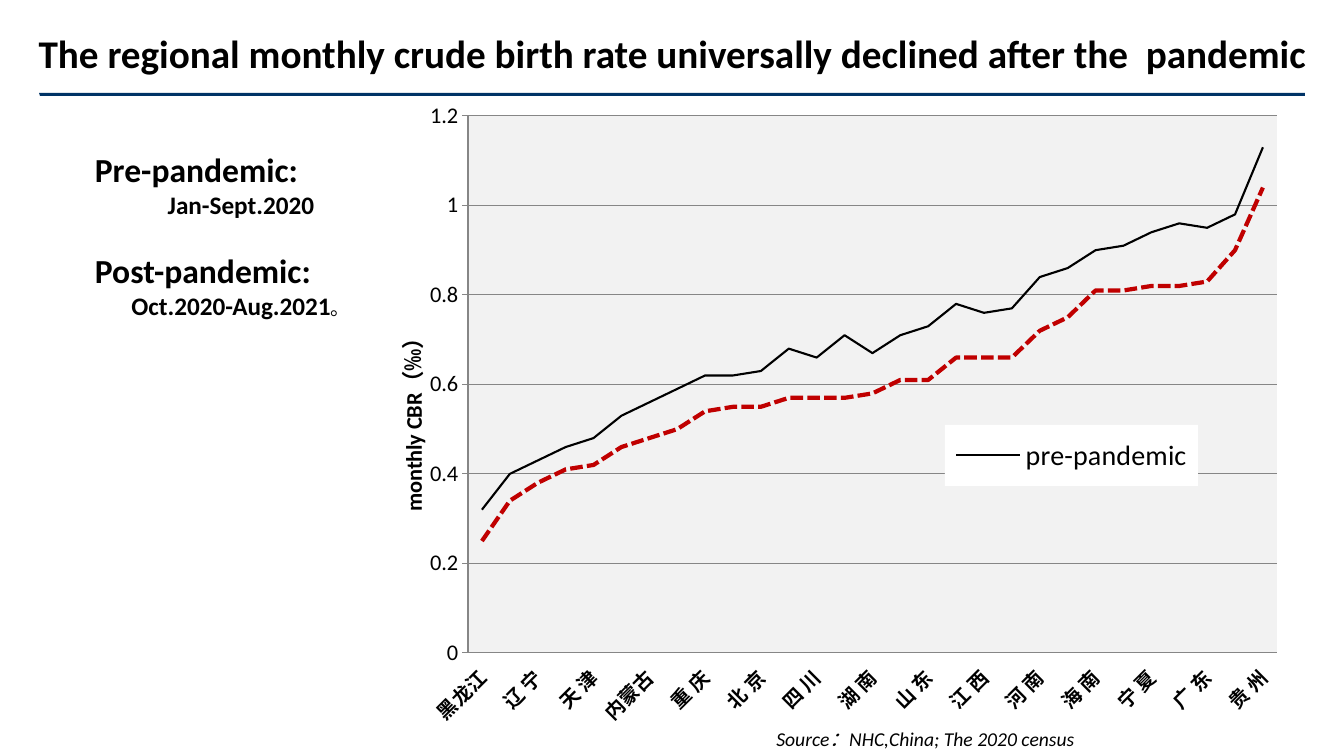
import lxml.etree
import pptx
import pptx.chart.data
import pptx.dml.color
import pptx.enum.chart
import pptx.enum.dml
import pptx.enum.text
import pptx.oxml
import pptx.oxml.ns
import pptx.util

PX = 914400 / 100.8
THEME = {
    "font": "Calibri",
    "text": "000000", "rule": "003366", "post": "C00000",
    "plot": "F2F2F2", "grid": "868686", "legend": "FFFFFF",
    "title": 28, "heading": 24, "period": 18, "note": 14,
    "region": 14, "axis": 16, "key": 20,
}
CENTER = pptx.enum.text.PP_ALIGN.CENTER
LEFT = pptx.enum.text.PP_ALIGN.LEFT
CHART_BOX = (379, 86, 959, 670)


def style(font, size, color="text", bold=False, italic=False):
    font.name = THEME["font"]
    font.size = pptx.util.Pt(THEME[size])
    font.bold = bold
    font.italic = italic
    font.color.rgb = pptx.dml.color.RGBColor.from_string(THEME[color])


def chart_layout(left, top, width=None, height=None, inner=False):
    x, y, w, h = CHART_BOX
    settings = [("layoutTarget", "inner")] if inner else []
    settings += [("xMode", "edge"), ("yMode", "edge"),
                 ("x", (left - x) / w), ("y", (top - y) / h)]
    if width:
        settings += [("w", width / w), ("h", height / h)]
    layout = pptx.oxml.parse_xml(f"<c:layout {pptx.oxml.ns.nsdecls('c')}/>")
    manual = lxml.etree.SubElement(layout, pptx.oxml.ns.qn("c:manualLayout"))
    for tag, val in settings:
        lxml.etree.SubElement(manual, pptx.oxml.ns.qn("c:" + tag)).set("val", str(val))
    return layout


deck = pptx.Presentation()
deck.slide_width = pptx.util.Emu(round(1344 * PX))
deck.slide_height = pptx.util.Emu(round(756 * PX))
slide = deck.slides.add_slide(deck.slide_layouts[5])

headline = slide.shapes.title
headline.left, headline.top, headline.width, headline.height = [
    round(v * PX) for v in (0, 29, 1344, 47)]
headline_frame = headline.text_frame
headline_frame.margin_left = headline_frame.margin_right = 0
headline_frame.margin_top = headline_frame.margin_bottom = 0
headline_frame.auto_size = pptx.enum.text.MSO_AUTO_SIZE.NONE
headline_frame.vertical_anchor = pptx.enum.text.MSO_ANCHOR.TOP
headline_frame.paragraphs[0].alignment = CENTER
headline_run = headline_frame.paragraphs[0].add_run()
headline_run.text = "The regional monthly crude birth rate universally declined after the  pandemic"
style(headline_run.font, "title", bold=True)

outline = slide.shapes.build_freeform(39, 93, scale=PX)
outline.add_line_segments([(1305, 93), (1305, 96), (40, 96)])
rule = outline.convert_to_shape()
rule.shadow.inherit = False
rule.fill.solid()
rule.fill.fore_color.rgb = pptx.dml.color.RGBColor.from_string(THEME["rule"])
rule.line.fill.background()

regions = [
    "黑龙江", "吉 林", "辽 宁", "上 海", "天 津", "江 苏", "内蒙古", "新 疆", "重 庆", "浙 江",
    "北 京", "河 北", "四 川", "山 西", "湖 南", "安 徽", "山 东", "陕 西", "江 西", "福 建",
    "河 南", "甘 肃", "海 南", "云 南", "宁 夏", "广 西", "广 东", "青 海", "贵 州"]
birth_rates = {
    "pre-pandemic": [
        0.32, 0.4, 0.43, 0.46, 0.48, 0.53, 0.56, 0.59, 0.62, 0.62,
        0.63, 0.68, 0.66, 0.71, 0.67, 0.71, 0.73, 0.78, 0.76, 0.77,
        0.84, 0.86, 0.9, 0.91, 0.94, 0.96, 0.95, 0.98, 1.13],
    "post-pandemic": [
        0.25, 0.34, 0.38, 0.41, 0.42, 0.46, 0.48, 0.5, 0.54, 0.55,
        0.55, 0.57, 0.57, 0.57, 0.58, 0.61, 0.61, 0.66, 0.66, 0.66,
        0.72, 0.75, 0.81, 0.81, 0.82, 0.82, 0.83, 0.9, 1.04],
}
rate_data = pptx.chart.data.CategoryChartData()
rate_data.categories = regions
for period, rates in birth_rates.items():
    rate_data.add_series(period, rates)
chart = slide.shapes.add_chart(
    pptx.enum.chart.XL_CHART_TYPE.LINE,
    *[round(v * PX) for v in CHART_BOX], rate_data).chart
chart.has_title = False
style(chart.font, "axis")
chart.plots[0].vary_by_categories = False

line_styles = [("text", 1.5, None), ("post", 3, pptx.enum.dml.MSO_LINE.SQUARE_DOT)]
for series, (color, weight, dash) in zip(chart.plots[0].series, line_styles):
    series.smooth = False
    series.marker.style = pptx.enum.chart.XL_MARKER_STYLE.NONE
    series.format.line.color.rgb = pptx.dml.color.RGBColor.from_string(THEME[color])
    series.format.line.width = pptx.util.Pt(weight)
    if dash:
        series.format.line.dash_style = dash

region_axis, rate_axis = chart.category_axis, chart.value_axis
region_axis.major_tick_mark = pptx.enum.chart.XL_TICK_MARK.NONE
region_axis.tick_label_position = pptx.enum.chart.XL_TICK_LABEL_POSITION.LOW
style(region_axis.tick_labels.font, "region", bold=True)
region_axis._element.txPr.find(pptx.oxml.ns.qn("a:bodyPr")).set("rot", "-2700000")
rate_axis.minimum_scale, rate_axis.maximum_scale, rate_axis.major_unit = 0, 1.2, 0.2
rate_axis.major_tick_mark = pptx.enum.chart.XL_TICK_MARK.OUTSIDE
rate_axis.has_major_gridlines = True
rate_axis.tick_labels.number_format = "General"
rate_axis.tick_labels.number_format_is_linked = False
style(rate_axis.tick_labels.font, "axis")
for part in (region_axis, rate_axis, rate_axis.major_gridlines):
    part.format.line.color.rgb = pptx.dml.color.RGBColor.from_string(THEME["grid"])
    part.format.line.width = pptx.util.Pt(0.75)

rate_title = rate_axis.axis_title
unit_run = rate_title.text_frame.paragraphs[0].add_run()
unit_run.text = "monthly CBR（‰）"
style(unit_run.font, "axis", bold=True)
rate_title.text_frame._txBody.bodyPr.set("rot", "-5400000")
for stale in rate_title._element.findall(pptx.oxml.ns.qn("c:layout")):
    rate_title._element.remove(stale)
rate_title._element.find(pptx.oxml.ns.qn("c:tx")).addnext(chart_layout(390, 323))

chart.has_legend = True
legend = chart.legend
legend.position = pptx.enum.chart.XL_LEGEND_POSITION.RIGHT
legend.include_in_layout = False
style(legend.font, "key")
for stale in legend._element.findall(pptx.oxml.ns.qn("c:layout")):
    legend._element.remove(stale)
position = legend._element.find(pptx.oxml.ns.qn("c:legendPos"))
position.addnext(chart_layout(945, 425, 253, 61))
position.addnext(pptx.oxml.parse_xml(
    f"<c:legendEntry {pptx.oxml.ns.nsdecls('c')}>"
    '<c:idx val="1"/><c:delete val="1"/></c:legendEntry>'))

plot_area = chart._chartSpace.chart.plotArea
for stale in plot_area.findall(pptx.oxml.ns.qn("c:layout")):
    plot_area.remove(stale)
plot_area.insert(0, chart_layout(468, 116, 809, 537, inner=True))
fill_xml = (f"<c:spPr {pptx.oxml.ns.nsdecls('c', 'a')}><a:solidFill>"
            '<a:srgbClr val="{}"/></a:solidFill><a:ln><a:noFill/></a:ln></c:spPr>')
plot_area.append(pptx.oxml.parse_xml(fill_xml.format(THEME["plot"])))
legend._element.find(pptx.oxml.ns.qn("c:txPr")).addprevious(
    pptx.oxml.parse_xml(fill_xml.format(THEME["legend"])))

notes = [
    ((85, 144, 312, 183), [
        (LEFT, 0, [("Pre-pandemic:", "heading", True, False)]),
        (CENTER, 0, [("Jan-Sept.2020", "period", True, False)]),
        (LEFT, 22, [("Post-pandemic:", "heading", True, False)]),
        (CENTER, 0, [("Oct.2020-Aug.2021", "period", True, False),
                     ("。", "note", False, False)]),
    ]),
    ((729, 722, 393, 34), [
        (CENTER, 0, [("Source：NHC,China; The 2020 census", "note", False, True)]),
    ]),
]
for box, lines in notes:
    note_frame = slide.shapes.add_textbox(*[round(v * PX) for v in box]).text_frame
    note_frame.word_wrap = True
    for index, (alignment, gap, runs) in enumerate(lines):
        line = note_frame.add_paragraph() if index else note_frame.paragraphs[0]
        line.alignment = alignment
        line.space_before = pptx.util.Pt(gap)
        for words, size, bold, italic in runs:
            run = line.add_run()
            run.text = words
            style(run.font, size, bold=bold, italic=italic)

deck.save("out.pptx")
